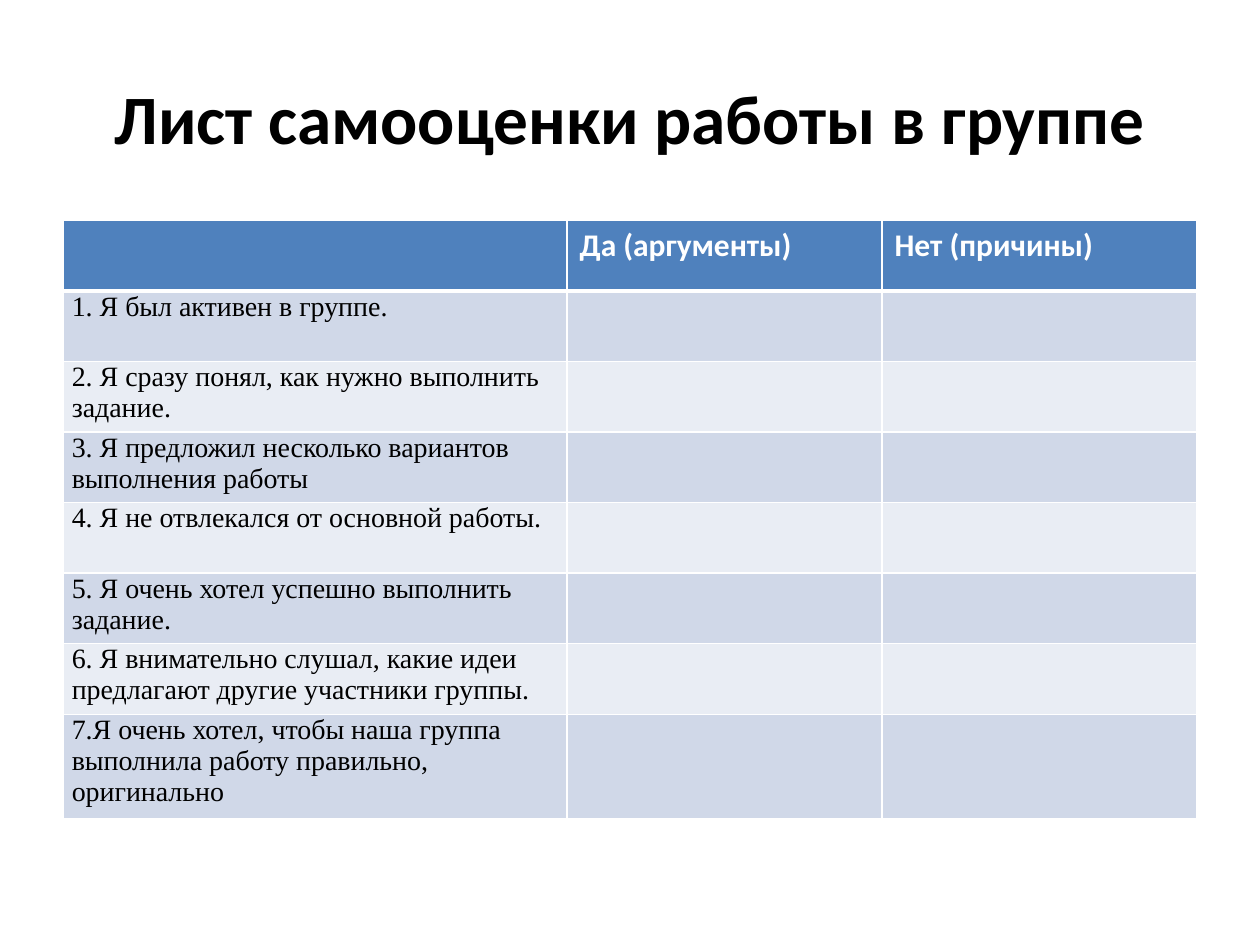
from lxml import etree
from pptx import Presentation
from pptx.dml.color import RGBColor
from pptx.enum.text import MSO_ANCHOR, PP_ALIGN
from pptx.oxml.ns import qn
from pptx.util import Inches, Pt

MIDDLE = MSO_ANCHOR.MIDDLE
CENTER = PP_ALIGN.CENTER

BLACK = RGBColor(0x00, 0x00, 0x00)
WHITE = RGBColor(0xFF, 0xFF, 0xFF)
BLUE = RGBColor(0x4F, 0x81, 0xBD)
BAND_DARK = RGBColor(0xD0, 0xD8, 0xE8)
BAND_LIGHT = RGBColor(0xE9, 0xED, 0xF4)

TITLE = "Лист самооценки работы в группе"
HEADERS = ["", "Да (аргументы)", "Нет (причины)"]
STATEMENTS = [
    "1. Я был активен в группе.",
    "2. Я сразу понял, как нужно выполнить задание.",
    "3. Я предложил несколько вариантов выполнения работы",
    "4. Я не отвлекался от основной работы.",
    "5. Я очень хотел успешно выполнить задание.",
    "6. Я внимательно слушал, какие идеи предлагают другие участники группы.",
    "7.Я очень хотел, чтобы наша группа выполнила работу правильно, оригинально",
]
COLUMN_WIDTHS = [4, 2.5, 2.5]
ROW_HEIGHTS = [0.56] * len(STATEMENTS) + [0.83]


class SlideBuilder:
    heading_font = "Calibri"
    body_font = "Times New Roman"
    thin, thick = 1, 3

    def __init__(self, page):
        self.page = page

    def set_text(self, frame, text, font, size, color, bold=False):
        frame.text = text
        for span in frame.paragraphs[0].runs:
            span.font.name = font
            span.font.size = Pt(size)
            span.font.bold = bold
            span.font.color.rgb = color

    def title(self, text, left, top, width, height):
        box = self.page.shapes.add_textbox(
            Inches(left), Inches(top), Inches(width), Inches(height))
        frame = box.text_frame
        frame.word_wrap = True
        frame.vertical_anchor = MIDDLE
        self.set_text(frame, text, self.heading_font, 39.6, BLACK, bold=True)
        frame.paragraphs[0].alignment = CENTER

    def borders(self, cell, top, bottom):
        """Draw white cell borders; must run before the cell gets its fill."""
        properties = cell._tc.get_or_add_tcPr()
        widths = {"L": self.thin, "R": self.thin, "T": top, "B": bottom}
        for side, width in widths.items():
            line = etree.SubElement(properties, qn(f"a:ln{side}"), w=str(Pt(width)))
            fill = etree.SubElement(line, qn("a:solidFill"))
            etree.SubElement(fill, qn("a:srgbClr"), val=str(WHITE))

    def cell(self, cell, text, row, column):
        self.borders(cell,
                     top=self.thick if row == 1 else self.thin,
                     bottom=self.thick if row == 0 else self.thin)
        cell.fill.solid()
        if row == 0:
            cell.fill.fore_color.rgb = BLUE
            self.set_text(cell.text_frame, text, self.heading_font, 18, WHITE, bold=True)
            return
        cell.fill.fore_color.rgb = BAND_DARK if row % 2 else BAND_LIGHT
        if column == 0:
            cell.margin_left = cell.margin_right = Inches(0.07)
            cell.margin_top = cell.margin_bottom = 0
            self.set_text(cell.text_frame, text, self.body_font, 16, BLACK)

    def table(self, rows, widths, heights, left, top):
        table = self.page.shapes.add_table(
            len(rows), len(widths), Inches(left), Inches(top),
            Inches(sum(widths)), Inches(sum(heights))).table
        for column, width in zip(table.columns, widths):
            column.width = Inches(width)
        for row, height in zip(table.rows, heights):
            row.height = Inches(height)
        for row, texts in enumerate(rows):
            for column, text in enumerate(texts):
                self.cell(table.cell(row, column), text, row, column)


def main():
    deck = Presentation()
    deck.slide_width, deck.slide_height = Inches(10), Inches(7.5)
    builder = SlideBuilder(deck.slides.add_slide(deck.slide_layouts[6]))
    builder.title(TITLE, 0.5, 0.3, 9, 1.25)
    rows = [HEADERS] + [[statement, "", ""] for statement in STATEMENTS]
    builder.table(rows, COLUMN_WIDTHS, ROW_HEIGHTS, 0.5, 1.75)
    deck.save("out.pptx")


if __name__ == "__main__":
    main()
